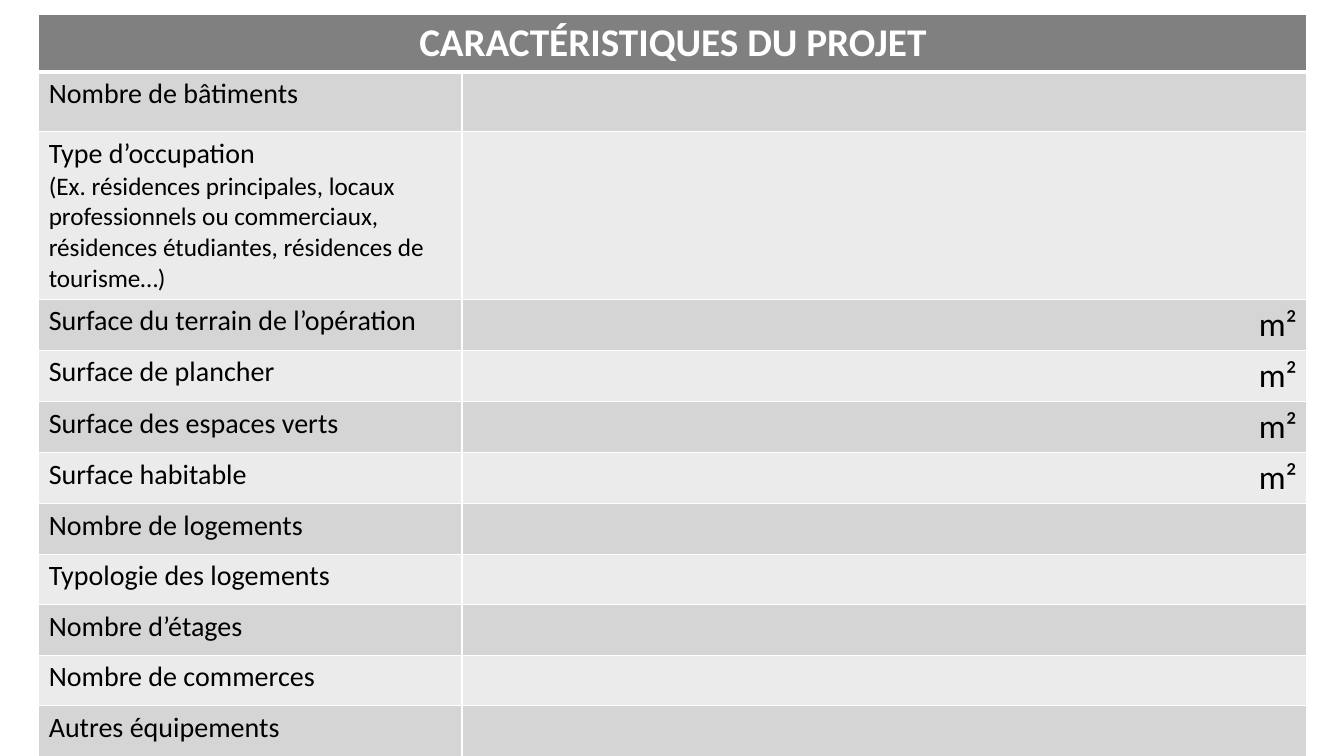
from lxml import etree
from pptx import Presentation
from pptx.dml.color import RGBColor
from pptx.enum.text import PP_ALIGN
from pptx.oxml.ns import qn
from pptx.util import Inches, Pt

LEFT, CENTER, RIGHT = PP_ALIGN.LEFT, PP_ALIGN.CENTER, PP_ALIGN.RIGHT
WHITE = RGBColor(0xFF, 0xFF, 0xFF)
BLACK = RGBColor(0x00, 0x00, 0x00)
HEADER_GRAY = RGBColor(0x80, 0x80, 0x80)
BANDS = (RGBColor(0xD5, 0xD5, 0xD5), RGBColor(0xEB, 0xEB, 0xEB))

TITLE = "CARACTÉRISTIQUES DU PROJET"
AREA_UNIT = "m²"
EXAMPLES = ("(Ex. résidences principales, locaux professionnels ou commerciaux, "
            "résidences étudiantes, résidences de tourisme…)")
FEATURES = (
    (("Nombre de bâtiments",), ""),
    (("Type d’occupation", EXAMPLES), ""),
    (("Surface du terrain de l’opération",), AREA_UNIT),
    (("Surface de plancher",), AREA_UNIT),
    (("Surface des espaces verts",), AREA_UNIT),
    (("Surface habitable",), AREA_UNIT),
    (("Nombre de logements",), ""),
    (("Typologie des logements",), ""),
    (("Nombre d’étages",), ""),
    (("Nombre de commerces",), ""),
    (("Autres équipements",), ""),
)

COLUMN_SHARES = (31.5, 62.87)
TOP_ROW_SHARES = (7.5, 7.9, 21.75)
ROW_SHARE = 6.69


class ProjectSheet:
    font = "Calibri"

    def __init__(self, deck):
        self.width, self.height = deck.slide_width, deck.slide_height
        self.slide = deck.slides.add_slide(deck.slide_layouts[6])

    def across(self, percent):
        return round(self.width * percent / 100)

    def down(self, percent):
        return round(self.height * percent / 100)

    def table(self, left, top, column_shares, row_shares):
        grid = self.slide.shapes.add_table(
            len(row_shares), len(column_shares), self.across(left), self.down(top),
            self.across(sum(column_shares)), self.down(sum(row_shares))).table
        for column, share in zip(grid.columns, column_shares):
            column.width = self.across(share)
        for row, share in zip(grid.rows, row_shares):
            row.height = self.down(share)
        return grid

    def cell(self, cell, lines, sizes, fill, color=BLACK, bold=False,
             align=LEFT, top=1, bottom=1):
        self.borders(cell, top, bottom)
        cell.fill.solid()
        cell.fill.fore_color.rgb = fill
        cell.text_frame.text = "\n".join(lines)
        for paragraph, size in zip(cell.text_frame.paragraphs, sizes):
            paragraph.alignment = align
            for run in paragraph.runs:
                run.font.name = self.font
                run.font.size = Pt(size)
                run.font.bold = bold
                run.font.color.rgb = color

    def borders(self, cell, top, bottom):
        properties = cell._tc.get_or_add_tcPr()
        for side, points in (("L", 1), ("R", 1), ("T", top), ("B", bottom)):
            line = etree.SubElement(properties, qn(f"a:ln{side}"), w=str(Pt(points)))
            paint = etree.SubElement(line, qn("a:solidFill"))
            etree.SubElement(paint, qn("a:srgbClr"), val=str(WHITE))


def main():
    deck = Presentation()
    deck.slide_width, deck.slide_height = Inches(13.33), Inches(7.5)
    sheet = ProjectSheet(deck)

    plain_rows = len(FEATURES) + 1 - len(TOP_ROW_SHARES)
    grid = sheet.table(2.88, 1.85, COLUMN_SHARES,
                       TOP_ROW_SHARES + (ROW_SHARE,) * plain_rows)
    grid.cell(0, 0).merge(grid.cell(0, 1))
    for column, heading in enumerate((TITLE, "")):
        sheet.cell(grid.cell(0, column), (heading,), (28,), HEADER_GRAY,
                   WHITE, True, CENTER, bottom=3)

    for index, (label, unit) in enumerate(FEATURES):
        band = BANDS[index % 2]
        top = 1 if index else 3
        sheet.cell(grid.cell(index + 1, 0), label, (20, 18), band, top=top)
        sheet.cell(grid.cell(index + 1, 1), (unit,), (24,), band, align=RIGHT, top=top)

    deck.save("out.pptx")


if __name__ == "__main__":
    main()
